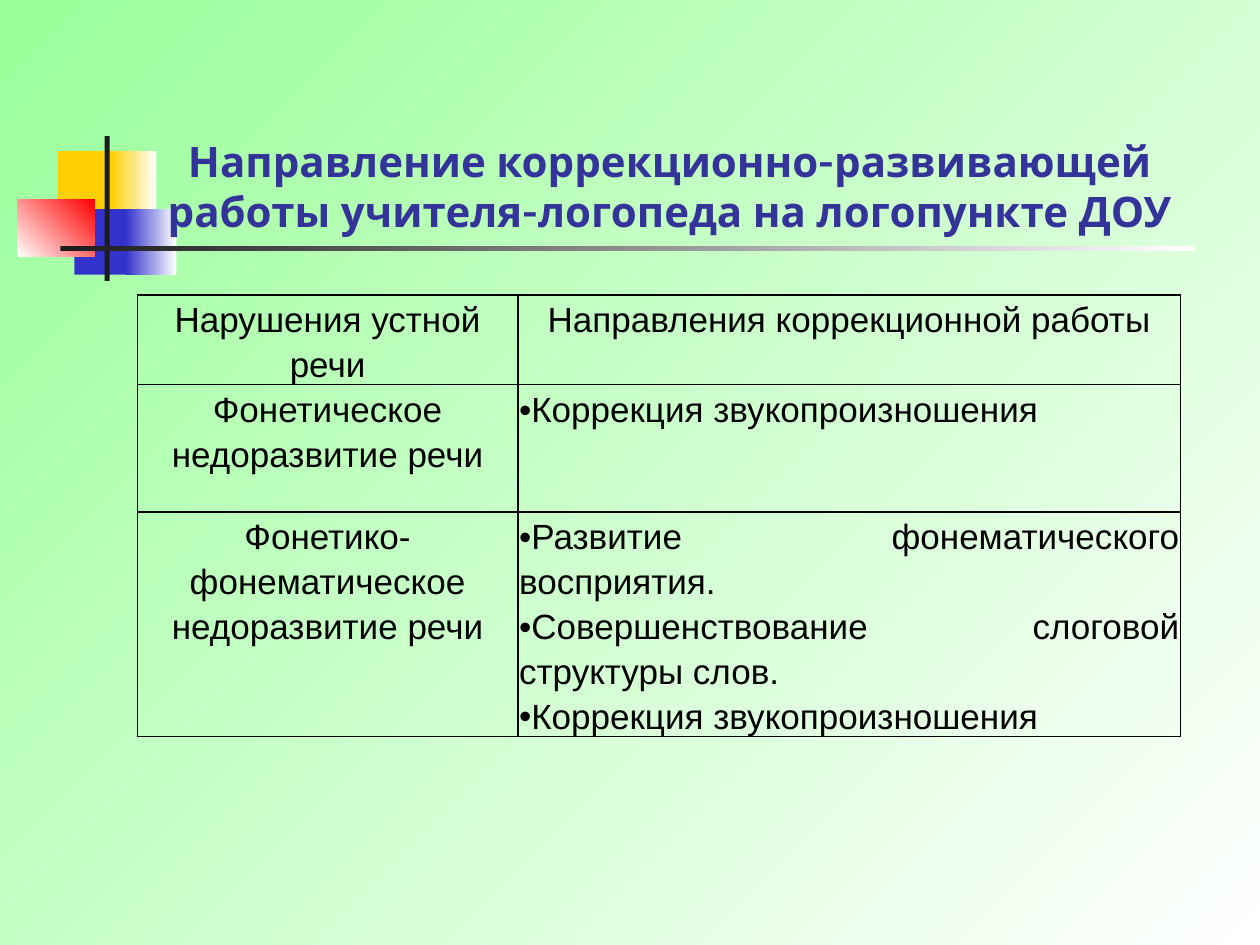
from lxml.etree import SubElement
from pptx import Presentation
from pptx.dml.color import RGBColor
from pptx.enum.shapes import MSO_SHAPE
from pptx.enum.text import MSO_ANCHOR, MSO_AUTO_SIZE, PP_ALIGN
from pptx.oxml import parse_xml
from pptx.oxml.ns import nsdecls, qn
from pptx.util import Inches, Pt

# left, top, width, height, fill colours (two for a gradient), clockwise angle
DECORATIONS = [
    (0.46, 1.2, 0.48, 0.52, ["FFCF01"], 0),
    (0.88, 1.2, 0.36, 0.52, ["FFCF01", "FFFFFF"], 0),
    (0.59, 1.66, 0.46, 0.52, ["3333CC"], 0),
    (1, 1.66, 0.4, 0.52, ["3333CC", "FFFFFF"], 0),
    (0.14, 1.58, 0.61, 0.46, ["FFFFFF", "FF0000"], 315),
    (0.83, 1.08, 0.04, 1.15, ["1C1C1C"], 0),
    (0.48, 1.95, 9, 0.04, ["1C1C1C", "FFFFFF"], 0),
]
TITLE = "Направление коррекционно-развивающей работы учителя-логопеда на логопункте ДОУ"
HEADERS = ["Нарушения устной речи", "Направления коррекционной работы"]
DISORDERS = [
    ("Фонетическое недоразвитие речи", ["Коррекция звукопроизношения"]),
    ("Фонетико-фонематическое недоразвитие речи", [
        "Развитие фонематического восприятия.",
        "Совершенствование слоговой структуры слов.",
        "Коррекция звукопроизношения",
    ]),
]
COLUMN_WIDTHS = [3.02, 5.26]
ROW_HEIGHTS = [0.48, 1.01, 1.55]


def color(value):
    return RGBColor.from_string(value)


def set_fill(fill, colors, angle=0):
    if len(colors) == 1:
        fill.solid()
        fill.fore_color.rgb = color(colors[0])
        return
    fill.gradient()
    fill.gradient_angle = (360 - angle) % 360
    for position, (stop, value) in enumerate(zip(fill.gradient_stops, colors)):
        stop.position = position
        stop.color.rgb = color(value)


def set_font(paragraph, name, size, value, bold=False):
    font = paragraph.font
    font.name, font.size, font.bold = name, Pt(size), bold
    font.color.rgb = color(value)


def add_decoration(slide, left, top, width, height, colors, angle):
    shape = slide.shapes.add_shape(
        MSO_SHAPE.RECTANGLE, Inches(left), Inches(top), Inches(width), Inches(height))
    shape.shadow.inherit = False
    shape.line.fill.background()
    set_fill(shape.fill, colors, angle)


def add_title(slide):
    title = slide.shapes.title
    title.left, title.top = Inches(1.02), Inches(1.02)
    title.width, title.height = Inches(8.59), Inches(1.31)
    frame = title.text_frame
    frame.text = TITLE
    frame.word_wrap = True
    frame.auto_size = MSO_AUTO_SIZE.NONE
    frame.vertical_anchor = MSO_ANCHOR.MIDDLE
    frame.margin_bottom = Inches(0.45)  # lifts the text above the rule
    paragraph = frame.paragraphs[0]
    paragraph.alignment = PP_ALIGN.CENTER
    set_font(paragraph, "Karla", 24, "333399", bold=True)


def add_bullet(paragraph):
    properties = paragraph._p.get_or_add_pPr()
    properties.set("marL", "0")
    properties.set("indent", "0")
    SubElement(properties, qn("a:buFont"), typeface="Arial")
    SubElement(properties, qn("a:buChar"), char="•")


def add_borders(cell):
    properties = cell._tc.get_or_add_tcPr()
    for index, side in enumerate(["lnL", "lnR", "lnT", "lnB"]):
        properties.insert(index, parse_xml(
            f'<a:{side} {nsdecls("a")} w="{Pt(1)}"><a:solidFill>'
            f'<a:srgbClr val="000000"/></a:solidFill></a:{side}>'))


def fill_cell(cell, lines, bulleted=False):
    cell.fill.background()
    add_borders(cell)
    cell.margin_left = cell.margin_right = Inches(0.01)
    cell.margin_top = cell.margin_bottom = 0
    cell.text_frame.text = "\n".join(lines)
    for paragraph in cell.text_frame.paragraphs:
        paragraph.alignment = PP_ALIGN.JUSTIFY if bulleted else PP_ALIGN.CENTER
        paragraph.line_spacing = 1.15
        if bulleted:
            add_bullet(paragraph)
        set_font(paragraph, "Arial", 20, "000000")


def add_disorder_table(slide):
    table = slide.shapes.add_table(
        len(ROW_HEIGHTS), len(COLUMN_WIDTHS), Inches(1.09), Inches(2.34),
        Inches(sum(COLUMN_WIDTHS)), Inches(sum(ROW_HEIGHTS))).table
    table.first_row = table.horz_banding = False
    for column, width in zip(table.columns, COLUMN_WIDTHS):
        column.width = Inches(width)
    for row, height in zip(table.rows, ROW_HEIGHTS):
        row.height = Inches(height)
    for column, header in enumerate(HEADERS):
        fill_cell(table.cell(0, column), [header])
    for row, (disorder, directions) in enumerate(DISORDERS, start=1):
        fill_cell(table.cell(row, 0), [disorder])
        fill_cell(table.cell(row, 1), directions, bulleted=True)


def main():
    presentation = Presentation()
    presentation.slide_width, presentation.slide_height = Inches(10), Inches(7.5)
    slide = presentation.slides.add_slide(presentation.slide_layouts[5])
    set_fill(slide.background.fill, ["99FF99", "FFFFFF"], 45)

    # Corner ornament, behind the title
    for decoration in DECORATIONS:
        add_decoration(slide, *decoration)
    add_disorder_table(slide)

    # Title in front of the ornament
    add_title(slide)
    slide.shapes._spTree.append(slide.shapes.title._element)
    presentation.save("out.pptx")


if __name__ == "__main__":
    main()
